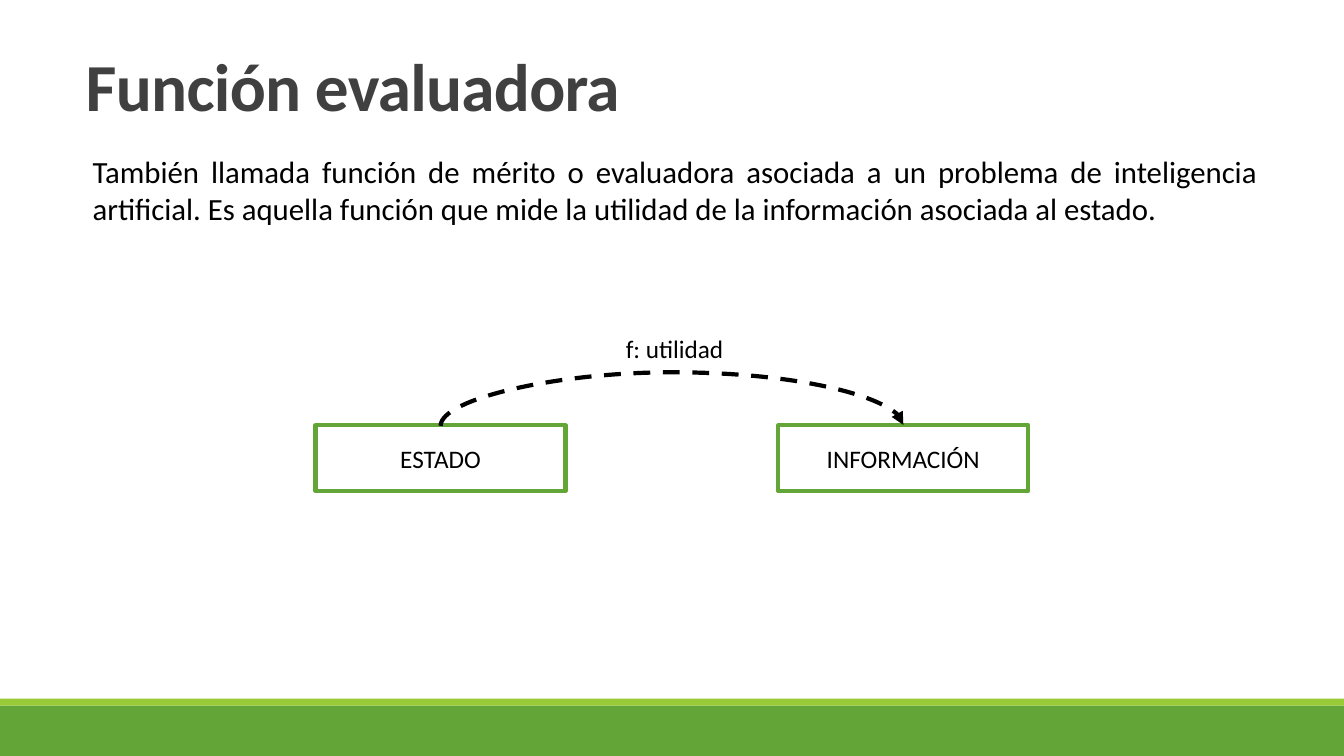
from lxml import etree
from pptx import Presentation
from pptx.dml.color import RGBColor
from pptx.enum.dml import MSO_LINE
from pptx.enum.shapes import MSO_CONNECTOR, MSO_SHAPE
from pptx.enum.text import MSO_ANCHOR, PP_ALIGN
from pptx.oxml.ns import qn
from pptx.util import Inches, Pt

CENTER, JUST = PP_ALIGN.CENTER, PP_ALIGN.JUSTIFY
TOP, MIDDLE = MSO_ANCHOR.TOP, MSO_ANCHOR.MIDDLE
RECT, CURVE, DASH = MSO_SHAPE.RECTANGLE, MSO_CONNECTOR.CURVE, MSO_LINE.DASH
GREEN, LIME, WHITE, BLACK, GREY = "63A537", "99CB38", "FFFFFF", "000000", "404040"


def color(code):
    return RGBColor.from_string(code)


def write(shape, text, size=18, ink=BLACK, bold=False, align=CENTER,
          anchor=MIDDLE, lead=1.0, before=0, indent=0, track=0):
    frame = shape.text_frame
    frame.word_wrap = True
    frame.vertical_anchor = anchor
    para = frame.paragraphs[0]
    para.alignment = align
    para.line_spacing = lead
    para.space_before = Pt(before)
    props = para._p.get_or_add_pPr()
    props.set("marL", str(Inches(indent)))
    props.set("indent", "0")
    run = para.add_run()
    run.text = text
    font = run.font
    font.name, font.size, font.bold = "Calibri", Pt(size), bold
    font.color.rgb = color(ink)
    if track:
        run._r.get_or_add_rPr().set("spc", str(track))


class Deck:
    def __init__(self):
        self.file = Presentation()
        self.file.slide_width = Inches(13.33)
        self.file.slide_height = Inches(7.5)
        self.slide = self.file.slides.add_slide(self.file.slide_layouts[5])
        self.shapes = self.slide.shapes

    def across(self, share):
        return round(self.file.slide_width * share / 100)

    def down(self, share):
        return round(self.file.slide_height * share / 100)

    def place(self, x, y, w, h):
        return self.across(x), self.down(y), self.across(w), self.down(h)

    def title(self, text, *spot, **style):
        shape = self.shapes.title
        shape.left, shape.top, shape.width, shape.height = self.place(*spot)
        write(shape, text, **style)

    def label(self, text, *spot, **style):
        write(self.shapes.add_textbox(*self.place(*spot)), text, **style)

    def box(self, *spot, fill=WHITE, line=None, text=None):
        shape = self.shapes.add_shape(RECT, *self.place(*spot))
        shape.shadow.inherit = False
        shape.fill.solid()
        shape.fill.fore_color.rgb = color(fill)
        if line:
            shape.line.color.rgb = color(line)
            shape.line.width = Pt(3)
        else:
            shape.line.fill.background()
        if text:
            write(shape, text)
        return shape

    def arc(self, start, end, rise):
        link = self.shapes.add_connector(CURVE, 0, 0, 0, 0)
        link.begin_connect(start, 0)
        link.end_connect(end, 0)
        span = link.end_x - link.begin_x
        mid, base = link.begin_x + span // 2, link.begin_y
        thin = Inches(0.01)
        link.left, link.top = mid - thin // 2, base - span // 2
        link.width, link.height = thin, span
        props = link._element.spPr
        for key, value in (("rot", "5400000"), ("flipH", "1"), ("flipV", "1")):
            props.find(qn("a:xfrm")).set(key, value)
        bend = round(self.down(rise) / thin * 100000)
        guides = props.find(qn("a:prstGeom")).get_or_add_avLst()
        etree.SubElement(guides, qn("a:gd"), name="adj1", fmla=f"val {bend}")
        link.line.color.rgb = color(BLACK)
        link.line.width = Pt(3)
        link.line.dash_style = DASH
        etree.SubElement(props.find(qn("a:ln")), qn("a:tailEnd"), type="triangle")
        etree.SubElement(props, qn("a:effectLst"))


def main():
    deck = Deck()
    deck.box(0, 93.33, 100, 6.67, fill=GREEN)
    deck.box(0, 92.4, 100, 0.93, fill=LIME)
    deck.title("Función evaluadora", 5.63, 6.8, 88.67, 19.07, size=48, ink=GREY,
               bold=True, align=JUST, anchor=TOP, lead=0.85, track=-50)
    deck.label("También llamada función de mérito o evaluadora asociada a un problema "
               "de inteligencia artificial. Es aquella función que mide la utilidad "
               "de la información asociada al estado.",
               5.63, 19.6, 88.67, 19.07, size=22, align=JUST, anchor=TOP,
               before=3, indent=0.07)
    state, info = [deck.box(x, 56.27, 18.6, 8.67, line=GREEN, text=text)
                   for x, text in ((23.48, "ESTADO"), (57.91, "INFORMACIÓN"))]
    deck.arc(state, info, 7.2)
    deck.label("f: utilidad", 43.74, 42.8, 12.38, 6.67, before=3, indent=0.07)
    deck.file.save("out.pptx")


if __name__ == "__main__":
    main()
